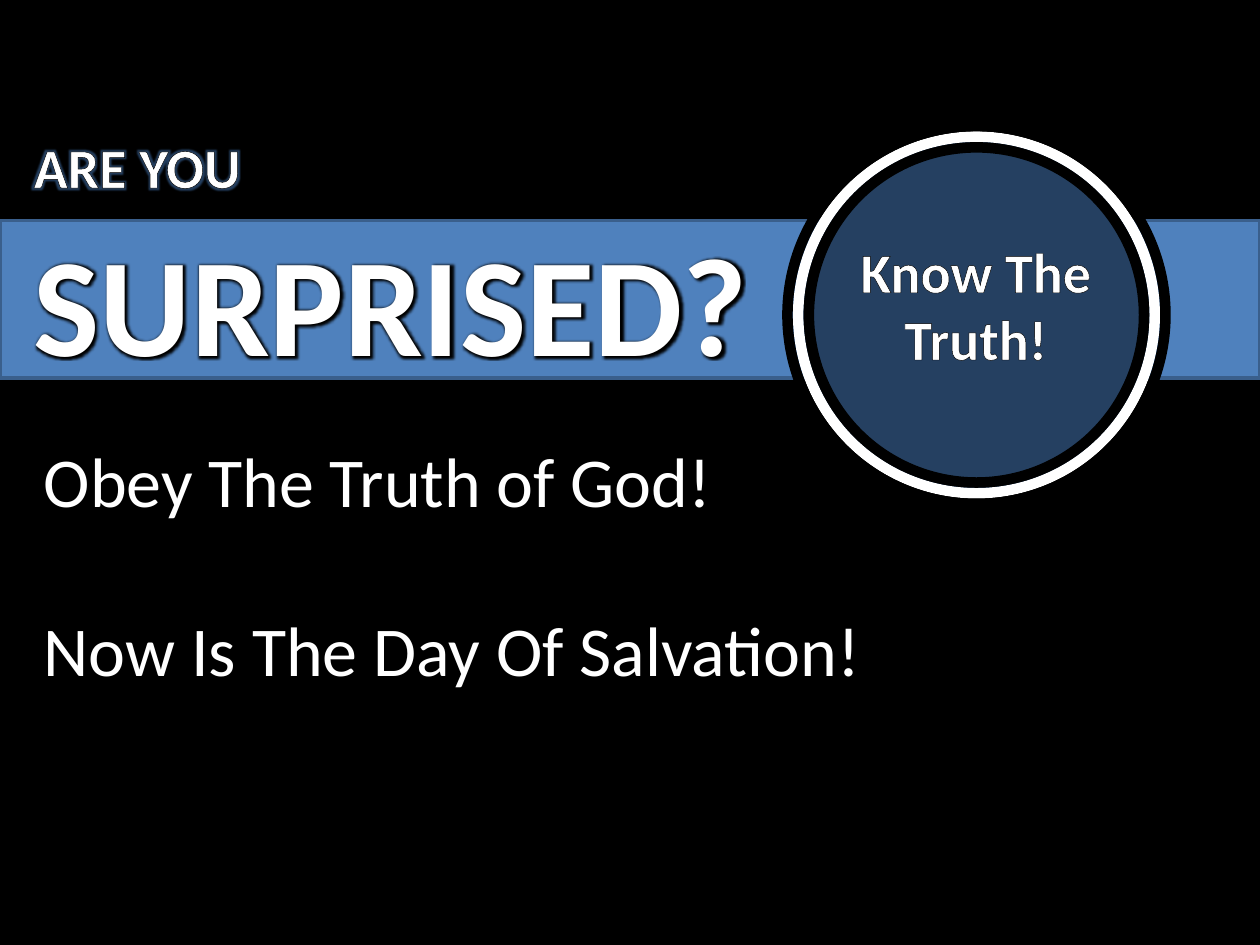
from lxml.etree import SubElement
from pptx import Presentation
from pptx.dml.color import RGBColor
from pptx.enum.shapes import MSO_SHAPE
from pptx.enum.text import MSO_AUTO_SIZE, PP_ALIGN
from pptx.oxml import parse_xml
from pptx.oxml.ns import nsdecls, qn
from pptx.util import Inches, Pt

THEME = {
    "font": "Calibri",
    "black": "000000", "white": "FFFFFF",
    "band": "4F81BD", "band_edge": "3A5F8C", "badge": "254061",
    "label": 32, "headline": 80, "body": 40,
    "ring": 6, "body_gap": 49,
}

LEAD_IN = "ARE YOU"
HEADLINE = "SURPRISED?"
BADGE = "Know The Truth!"
POINTS = ["Obey The Truth of God!", "Now Is The Day Of Salvation!"]

BADGE_CENTER = (7.75, 2.5)
BADGE_SIZE, RING_STEP = 2.83, 0.17


def color(name):
    return RGBColor.from_string(THEME[name])


def add_panel(page, kind, place, fill, edge, edge_width):
    panel = page.shapes.add_shape(kind, *map(Inches, place))
    panel.shadow.inherit = False
    if fill:
        panel.fill.solid()
        panel.fill.fore_color.rgb = color(fill)
    else:
        panel.fill.background()
    panel.line.color.rgb = color(edge)
    panel.line.width = Pt(edge_width)
    return panel


def add_circle(page, size, fill, edge):
    left, top = (middle - size / 2 for middle in BADGE_CENTER)
    return add_panel(page, MSO_SHAPE.OVAL, (left, top, size, size),
                     fill, edge, THEME["ring"])


def add_text(page, place, lines, size, bold=False):
    box = page.shapes.add_textbox(*map(Inches, place))
    frame = box.text_frame
    frame.word_wrap = True
    frame.auto_size = MSO_AUTO_SIZE.SHAPE_TO_FIT_TEXT
    frame.text = "\n".join(lines)
    for para in frame.paragraphs:
        font = para.runs[0].font
        font.name = THEME["font"]
        font.size = Pt(THEME[size])
        font.bold = bold
        font.color.rgb = color("white")
    return frame


def outline_text(frame):
    properties = frame.paragraphs[0].runs[0].font._element
    line = parse_xml(f'<a:ln {nsdecls("a")} w="{Pt(1.5)}"><a:solidFill>'
                     f'<a:srgbClr val="{THEME["black"]}"/></a:solidFill></a:ln>')
    properties.insert(0, line)


def glow_text(frame, name, radius):
    properties = frame.paragraphs[0].runs[0].font._element
    effects = parse_xml(f'<a:effectLst {nsdecls("a")}/>')
    glow = SubElement(effects, qn("a:glow"), rad=str(Pt(radius)))
    SubElement(glow, qn("a:srgbClr"), val=THEME[name])
    properties.find(qn("a:solidFill")).addnext(effects)


def main():
    deck = Presentation()
    deck.slide_width, deck.slide_height = Inches(10), Inches(7.5)
    page = deck.slides.add_slide(deck.slide_layouts[6])
    page.background.fill.solid()
    page.background.fill.fore_color.rgb = color("black")

    add_panel(page, MSO_SHAPE.RECTANGLE, (0, 1.75, 10, 1.25),
              "band", "band_edge", 2)
    lead_in = add_text(page, (0.17, 1, 9.83, 0.64), [LEAD_IN], "label", True)
    outline_text(lead_in)
    glow_text(lead_in, "badge", 5)
    headline = add_text(page, (0.17, 1.67, 6, 1.45), [HEADLINE], "headline", True)
    glow_text(headline, "black", 3)

    add_circle(page, BADGE_SIZE, "badge", "white")
    badge = add_text(page, (6.33, 1.83, BADGE_SIZE, 1.18), [BADGE], "label", True)
    badge.paragraphs[0].alignment = PP_ALIGN.CENTER
    outline_text(badge)
    for offset in (RING_STEP, -RING_STEP):
        add_circle(page, BADGE_SIZE + offset, None, "black")

    points = add_text(page, (0.25, 3.42, 9.75, 2.12), POINTS, "body")
    for para in points.paragraphs[1:]:
        para.space_before = Pt(THEME["body_gap"])
    for para in points.paragraphs:
        indent = para._p.get_or_add_pPr()
        indent.set("marL", str(Inches(0.38)))
        indent.set("indent", str(-Inches(0.38)))

    deck.save("out.pptx")


if __name__ == "__main__":
    main()
